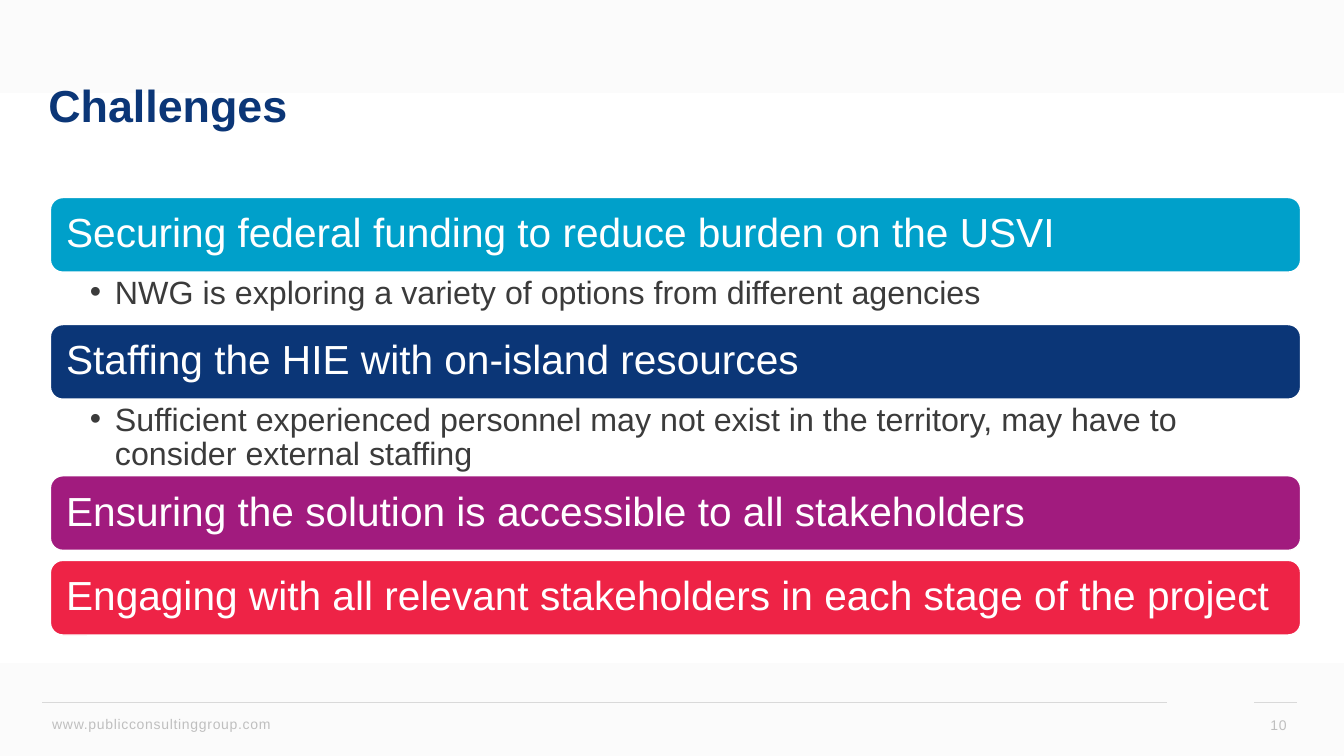
from pptx import Presentation
from pptx.dml.color import RGBColor
from pptx.enum.shapes import MSO_CONNECTOR, MSO_SHAPE
from pptx.enum.text import MSO_ANCHOR, MSO_AUTO_SIZE, PP_ALIGN
from pptx.oxml.ns import qn
from pptx.util import Inches, Pt
from lxml.etree import SubElement

NAVY = RGBColor(0x0B, 0x36, 0x77)
CYAN = RGBColor(0x00, 0xA0, 0xCA)
PURPLE = RGBColor(0xA1, 0x1B, 0x7E)
RED = RGBColor(0xEE, 0x23, 0x46)
WHITE = RGBColor(0xFF, 0xFF, 0xFF)
OFF_WHITE = RGBColor(0xFB, 0xFB, 0xFB)
CHARCOAL = RGBColor(0x3B, 0x3B, 0x3B)
FOOTER_GREY = RGBColor(0xBF, 0xBF, 0xBF)
RULE_GREY = RGBColor(0xD9, 0xD9, 0xD9)

SLIDE_WIDTH, SLIDE_HEIGHT = 13.33, 7.5
BAR_HEIGHT = 0.74

# Bar text, bar colour, note below, distance to the next bar
CHALLENGES = [
    ("Securing federal funding to reduce burden on the USVI", CYAN,
     "NWG is exploring a variety of options from different agencies", 0.52),
    ("Staffing the HIE with on-island resources", NAVY,
     "Sufficient experienced personnel may not exist in the territory, "
     "may have to consider external staffing", 0.76),
    ("Ensuring the solution is accessible to all stakeholders", PURPLE, None, 0.1),
    ("Engaging with all relevant stakeholders in each stage of the project", RED, None, 0),
]


def place(shape, left, top, width, height):
    shape.left, shape.top = Inches(left), Inches(top)
    shape.width, shape.height = Inches(width), Inches(height)


def write(shape, text, size, color, anchor, margins=(0.1, 0.05, 0.1, 0.05),
          align=PP_ALIGN.LEFT, line_spacing=1.0, bold=False):
    """Fill a shape with one paragraph; margins run left, top, right, bottom."""
    frame = shape.text_frame
    frame.word_wrap = True
    frame.auto_size = MSO_AUTO_SIZE.NONE
    frame.vertical_anchor = anchor
    (frame.margin_left, frame.margin_top,
     frame.margin_right, frame.margin_bottom) = map(Inches, margins)
    frame.text = text
    paragraph = frame.paragraphs[0]
    paragraph.alignment = align
    paragraph.line_spacing = line_spacing
    paragraph.space_before = Pt(0)
    return paragraph


def set_font(paragraph, size, color, bold=False):
    font = paragraph.font
    font.name, font.size, font.bold = "Arial", Pt(size), bold
    font.color.rgb = color


def add_backdrop(slide, height):
    """Fade in from the top and bottom edges, behind everything else."""
    for top, rotation in ((0, 0), (SLIDE_HEIGHT - height, 180)):
        fade = slide.shapes.add_shape(MSO_SHAPE.RECTANGLE, 0, Inches(top),
                                      Inches(SLIDE_WIDTH), Inches(height))
        fade.rotation = rotation
        fade.shadow.inherit = False
        fade.line.fill.background()
        fade.fill.gradient()
        fade.fill.gradient_angle = 270
        for stop, color in zip(fade.fill.gradient_stops, (OFF_WHITE, WHITE)):
            stop.color.rgb = color
        slide.shapes._spTree.insert(2, fade._element)


def add_title(slide, left, top, width, height):
    title = slide.shapes.title
    place(title, left, top, width, height)
    paragraph = write(title, "Challenges", 32, NAVY, MSO_ANCHOR.MIDDLE, line_spacing=0.9)
    set_font(paragraph, 32, NAVY, bold=True)


def add_bar(slide, text, color, left, top, width):
    bar = slide.shapes.add_shape(MSO_SHAPE.ROUNDED_RECTANGLE, Inches(left), Inches(top),
                                 Inches(width), Inches(BAR_HEIGHT))
    bar.shadow.inherit = False
    bar.fill.solid()
    bar.fill.fore_color.rgb = color
    bar.line.color.rgb = WHITE
    bar.line.width = Pt(1)
    paragraph = write(bar, text, 29, WHITE, MSO_ANCHOR.MIDDLE, (0.12,) * 4, line_spacing=0.9)
    set_font(paragraph, 29, WHITE)


def fill_note(note, text, left, top, width, height):
    place(note, left, top, width, height)
    paragraph = write(note, text, 23, CHARCOAL, MSO_ANCHOR.TOP,
                      (0.39, 0.04, 0.23, 0.04), line_spacing=0.9)
    properties = paragraph._p.get_or_add_pPr()
    properties.set("marL", str(Inches(0.25)))
    properties.set("indent", str(-Inches(0.25)))
    SubElement(properties, qn("a:buChar")).set("char", "•")
    set_font(paragraph, 23, CHARCOAL)


def add_challenges(slide, left, top, width):
    """Stack the bars, each followed by its note or a gap."""
    notes = iter([p for p in slide.placeholders if p.placeholder_format.idx in (1, 2)])
    for heading, color, note, step in CHALLENGES:
        add_bar(slide, heading, color, left, top, width)
        top += BAR_HEIGHT
        if note:
            fill_note(next(notes), note, left, top, width, step)
        top += step


def add_footer(slide, left, top, right):
    number_left = right - 0.42
    for start, end in ((left, 11.57), (number_left, right)):
        rule = slide.shapes.add_connector(MSO_CONNECTOR.STRAIGHT, Inches(start), Inches(top),
                                          Inches(end), Inches(top))
        rule.line.color.rgb = RULE_GREY
        rule.line.width = Pt(0.5)
        SubElement(rule._element.spPr, qn("a:effectLst"))
    for text, start, offset, width, height, anchor, align in (
            ("www.publicconsultinggroup.com", left, 0.08, 3.87, 0.28,
             MSO_ANCHOR.TOP, PP_ALIGN.LEFT),
            ("10", number_left, 0.02, 0.42, 0.4, MSO_ANCHOR.MIDDLE, PP_ALIGN.RIGHT)):
        label = slide.shapes.add_textbox(Inches(start), Inches(top + offset),
                                         Inches(width), Inches(height))
        paragraph = write(label, text, 10, FOOTER_GREY, anchor, align=align)
        set_font(paragraph, 10, FOOTER_GREY)
        paragraph.runs[0]._r.get_or_add_rPr().set("spc", "50")


def build_challenges_slide(presentation):
    two_content = presentation.slide_layouts[3]
    slide = presentation.slides.add_slide(two_content)
    slide.background.fill.solid()
    slide.background.fill.fore_color.rgb = WHITE
    add_backdrop(slide, 1.85)
    add_title(slide, 0.38, 0.4, 12.52, 1.35)
    add_challenges(slide, 0.5, 1.96, 12.4)
    add_footer(slide, 0.42, 6.97, 12.86)


def main():
    presentation = Presentation()
    presentation.slide_width = Inches(SLIDE_WIDTH)
    presentation.slide_height = Inches(SLIDE_HEIGHT)
    build_challenges_slide(presentation)
    presentation.save("out.pptx")


if __name__ == "__main__":
    main()
